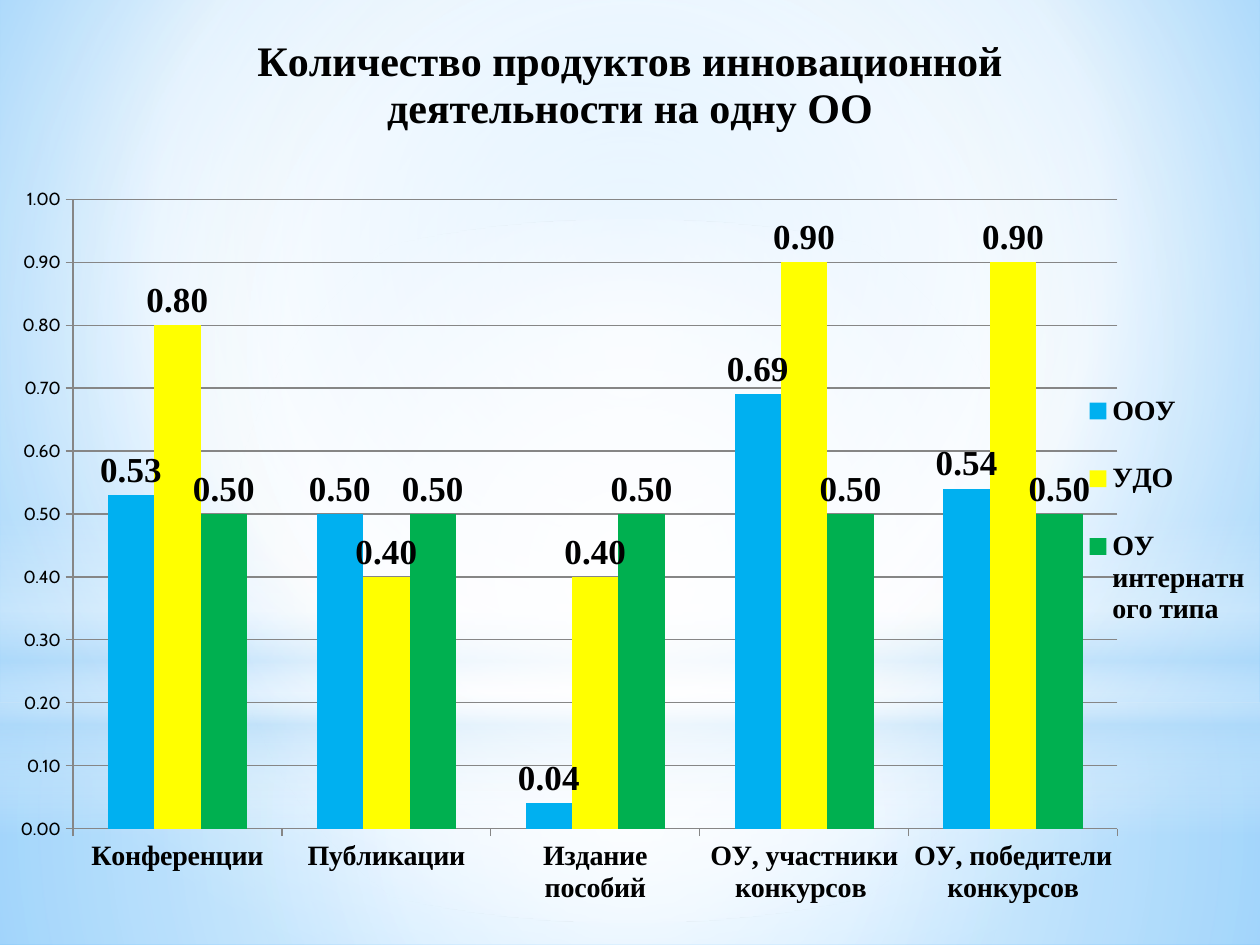
from lxml import etree
from pptx import Presentation
from pptx.chart.data import CategoryChartData
from pptx.dml.color import RGBColor
from pptx.enum.chart import XL_CHART_TYPE as ChartType
from pptx.enum.chart import XL_LABEL_POSITION as LabelPosition
from pptx.enum.chart import XL_LEGEND_POSITION as LegendPosition
from pptx.enum.chart import XL_TICK_MARK as TickMark
from pptx.enum.shapes import MSO_SHAPE as Shape
from pptx.oxml import parse_xml
from pptx.oxml.ns import nsdecls, qn
from pptx.util import Pt

PX = 914400 // 126
WIDTH, HEIGHT = 1260, 945

BLACK = RGBColor(0x00, 0x00, 0x00)
WHITE = RGBColor(0xFF, 0xFF, 0xFF)
GRAY = RGBColor(0x86, 0x86, 0x86)
MIST = RGBColor(0xB4, 0xDC, 0xFA)
SKY = RGBColor(0x9E, 0xD5, 0xFF)
DEEP_SKY = RGBColor(0x5B, 0xB9, 0xFF)
BLUE = RGBColor(0x00, 0xB0, 0xF0)
YELLOW = RGBColor(0xFF, 0xFF, 0x00)
GREEN = RGBColor(0x00, 0xB0, 0x50)

SERIF, SANS = "Times New Roman", "Cabin"
CENTER = (50, 50, 50, 50)
TITLE = "Количество продуктов инновационной деятельности на одну ОО"
CATEGORIES = ["Конференции", "Публикации", "Издание пособий",
              "ОУ, участники конкурсов ", "ОУ, победители конкурсов"]
SERIES = [
    ("ООУ", BLUE, (0.53, 0.5, 0.04, 0.69, 0.54)),
    ("УДО", YELLOW, (0.8, 0.4, 0.4, 0.9, 0.9)),
    ("ОУ интернатного типа", GREEN, (0.5, 0.5, 0.5, 0.5, 0.5)),
]
# Each haze layer: preset, box in px, stops (position, colour, opacity), focus
HAZE = [
    (Shape.RECTANGLE, (0, 703, WIDTH, 242),
     [(0, WHITE, 91), (37, WHITE, 76), (100, MIST, 79)], CENTER),
    (Shape.RECTANGLE, (0, 0, WIDTH, 703),
     [(0, WHITE, 89), (48, WHITE, 62), (100, MIST, 79)], CENTER),
    (Shape.RECTANGLE, (0, 519, WIDTH, 315),
     [(0, WHITE, 0), (29, WHITE, 30), (45, MIST, 40), (55, WHITE, 26),
      (65, MIST, 60), (100, WHITE, 0)], None),
    (Shape.OVAL, (0, 220, WIDTH, 703),
     [(0, WHITE, 100), (56, WHITE, 0)], CENTER),
]


def set_gradient(properties, stops, focus):
    """Swap the solid fill for a gradient: circular with a focus, else vertical."""
    gradient = parse_xml(f'<a:gradFill {nsdecls("a")} rotWithShape="1"/>')
    stop_list = etree.SubElement(gradient, qn("a:gsLst"))
    for position, color, opacity in stops:
        stop = etree.SubElement(stop_list, qn("a:gs"), pos=str(position * 1000))
        rgb = etree.SubElement(stop, qn("a:srgbClr"), val=str(color))
        if opacity < 100:
            etree.SubElement(rgb, qn("a:alpha"), val=str(opacity * 1000))
    if focus:
        circle = etree.SubElement(gradient, qn("a:path"), {"path": "circle"})
        sides = {side: str(value * 1000) for side, value in zip("ltrb", focus)}
        etree.SubElement(circle, qn("a:fillToRect"), sides)
    else:
        etree.SubElement(gradient, qn("a:lin"), ang="5400000", scaled="0")
    solid = properties.find(qn("a:solidFill"))
    properties.replace(solid, gradient)


def paint_background(slide):
    slide.background.fill.solid()
    slide.background.fill.fore_color.rgb = WHITE
    set_gradient(slide.element.find(".//" + qn("p:bgPr")),
                 [(0, SKY, 100), (60, WHITE, 100), (100, DEEP_SKY, 100)],
                 (20, 10, 20, 60))


def add_haze(slide, preset, box, stops, focus):
    haze = slide.shapes.add_shape(preset, *(value * PX for value in box))
    haze.shadow.inherit = False
    haze.line.fill.background()
    haze.fill.solid()
    haze.fill.fore_color.rgb = WHITE
    set_gradient(haze.element.spPr, stops, focus)


def set_font(font, size, name=SERIF, bold=True):
    font.size, font.name, font.bold = Pt(size), name, bold
    font.color.rgb = BLACK


def place(part, index, box, target=""):
    """Give a chart part a manual layout, in fractions of the chart."""
    for old in part.findall(qn("c:layout")):
        part.remove(old)
    layout = parse_xml(f'<c:layout {nsdecls("c")}><c:manualLayout/></c:layout>')
    settings = [("layoutTarget", target)] if target else []
    settings += [("xMode", "edge"), ("yMode", "edge"), *zip("xywh", box)]
    for tag, value in settings:
        etree.SubElement(layout[0], qn("c:" + tag), val=str(value))
    part.insert(index, layout)


def style_axes(chart):
    for axis in (chart.category_axis, chart.value_axis):
        axis.major_tick_mark = TickMark.OUTSIDE
        axis.minor_tick_mark = TickMark.NONE
        axis.format.line.color.rgb = GRAY
    set_font(chart.category_axis.tick_labels.font, 16)
    values = chart.value_axis
    set_font(values.tick_labels.font, 10, SANS, False)
    values.minimum_scale, values.maximum_scale, values.major_unit = 0, 1, 0.1
    values.tick_labels.number_format = "0.00"
    values.tick_labels.number_format_is_linked = False
    values.has_major_gridlines = True
    values.major_gridlines.format.line.color.rgb = GRAY


def style_series(series, color):
    series.format.fill.solid()
    series.format.fill.fore_color.rgb = color
    series.invert_if_negative = False
    labels = series.data_labels
    labels.show_value = True
    labels.position = LabelPosition.OUTSIDE_END
    labels.number_format = "0.00"
    labels.number_format_is_linked = False
    set_font(labels.font, 20)


def add_products_chart(slide):
    data = CategoryChartData(number_format="0.00")
    data.categories = CATEGORIES
    for name, _, values in SERIES:
        data.add_series(name, values)
    chart = slide.shapes.add_chart(ChartType.COLUMN_CLUSTERED, 0, 0,
                                   WIDTH * PX, HEIGHT * PX, data).chart
    set_font(chart.font, 10, SANS, False)
    chart.has_title = True
    heading = chart.chart_title.text_frame
    heading.text = TITLE
    set_font(heading.paragraphs[0].font, 24)

    plot = chart.plots[0]
    plot.gap_width, plot.overlap = 150, 0
    plot.vary_by_categories = False
    for series, (_, color, _) in zip(plot.series, SERIES):
        style_series(series, color)
    style_axes(chart)

    chart.has_legend = True
    chart.legend.position = LegendPosition.RIGHT
    chart.legend.include_in_layout = False
    set_font(chart.legend.font, 16)
    place(chart.element.find(".//" + qn("c:plotArea")), 0,
          (0.058, 0.211, 0.829, 0.666), "inner")
    place(chart.element.find(".//" + qn("c:legend")), 1,
          (0.87, 0.38, 0.13, 0.32))


def main():
    presentation = Presentation()
    presentation.slide_width = WIDTH * PX
    presentation.slide_height = HEIGHT * PX
    slide = presentation.slides.add_slide(presentation.slide_layouts[6])
    paint_background(slide)
    for layer in HAZE:
        add_haze(slide, *layer)
    add_products_chart(slide)
    presentation.save("out.pptx")


if __name__ == "__main__":
    main()
